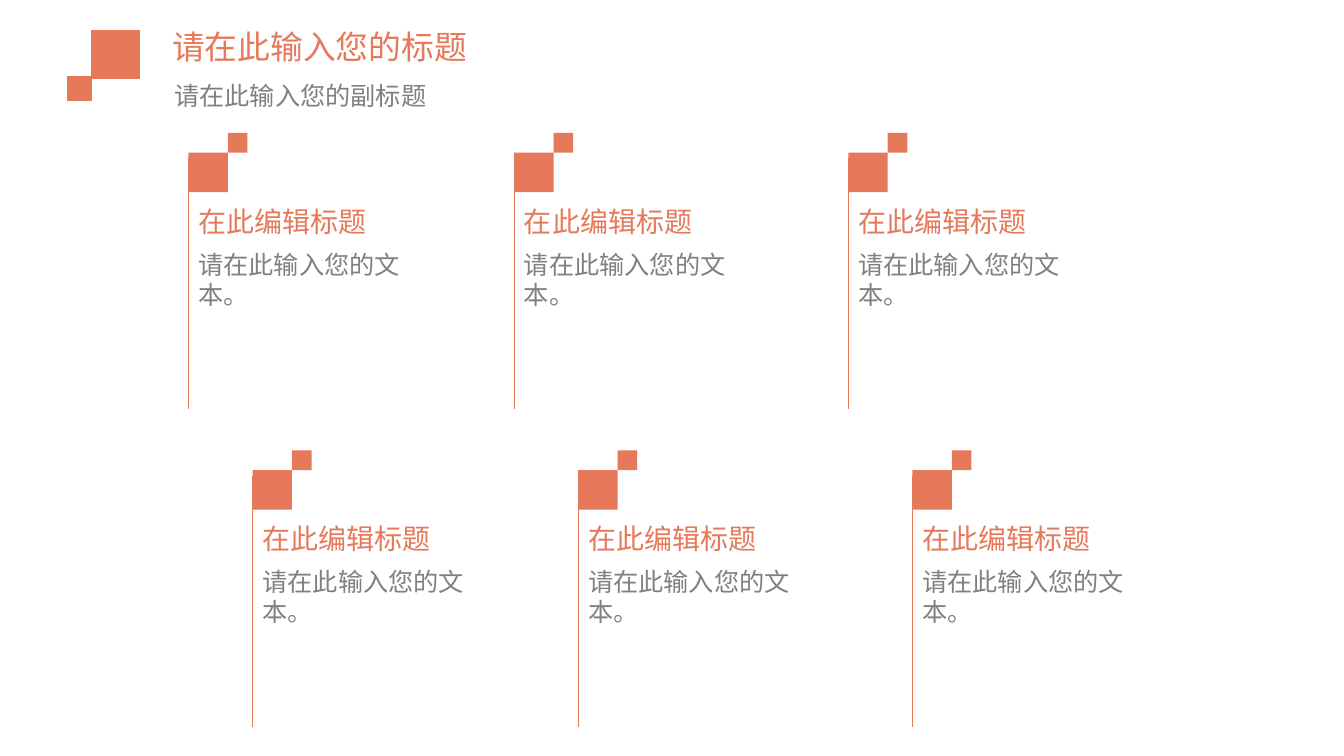
from dataclasses import dataclass
from itertools import product

from lxml import etree
from pptx import Presentation
from pptx.dml.color import RGBColor
from pptx.enum.shapes import MSO_CONNECTOR, MSO_SHAPE
from pptx.enum.text import MSO_ANCHOR
from pptx.oxml.ns import qn
from pptx.slide import Slide
from pptx.util import Pt

RECTANGLE = MSO_SHAPE.RECTANGLE
STRAIGHT = MSO_CONNECTOR.STRAIGHT
TOP = MSO_ANCHOR.TOP
MIDDLE = MSO_ANCHOR.MIDDLE

PAGE_WIDTH, PAGE_HEIGHT = 960, 540


@dataclass(frozen=True)
class Theme:
    accent: RGBColor = RGBColor(0xE6, 0x79, 0x5A)
    muted: RGBColor = RGBColor(0x80, 0x80, 0x80)
    font: str = "Arial"
    title_size: float = 23.4
    card_title_size: float = 20
    body_size: float = 18
    line_width: float = 0.75


@dataclass(frozen=True)
class Square:
    left: float
    top: float
    side: float


@dataclass(frozen=True)
class Card:
    left: float
    top: float
    title: str = "在此编辑标题"
    body: str = "请在此输入您的文本。"


THEME = Theme()

HEADER_SQUARES = (Square(65.5, 21.7, 34.2), Square(48.2, 54.7, 17.3))

# Two rows of three cards, the second row shifted to the right
COLUMN_LEFTS = (134.6, 367.2, 605.9)
ROWS = ((0, 95), (45.8, 321.8))  # shift, top
CARDS = [Card(left + shift, top)
         for (shift, top), left in product(ROWS, COLUMN_LEFTS)]

# Measures inside a card, from its top left corner
CARD_SQUARES = (Square(0, 14, 28.2), Square(28.2, 0, 14))
RULE_TOP, RULE_BOTTOM = 18, 197.3
TEXT_WIDTH = 174.2
TITLE_TOP, TITLE_HEIGHT = 46.8, 32.4
BODY_TOP, BODY_HEIGHT = 79.2, 142.6


def add_squares(page: Slide, squares: tuple[Square, ...], left: float = 0,
                top: float = 0, outlined: bool = False) -> None:
    group = page.shapes.add_group_shape()
    for square in squares:
        box = group.shapes.add_shape(
            RECTANGLE, Pt(left + square.left), Pt(top + square.top),
            Pt(square.side), Pt(square.side))
        box.shadow.inherit = False
        box.fill.solid()
        box.fill.fore_color.rgb = THEME.accent
        if outlined:
            box.line.color.rgb = THEME.accent
            box.line.width = Pt(THEME.line_width)
        else:
            box.line.fill.background()


def add_rule(page: Slide, left: float, top: float, bottom: float) -> None:
    rule = page.shapes.add_connector(
        STRAIGHT, Pt(left), Pt(top), Pt(left), Pt(bottom))
    rule.line.color.rgb = THEME.accent
    rule.line.width = Pt(THEME.line_width)
    etree.SubElement(rule._element.spPr, qn("a:effectLst"))


def add_text(page: Slide, text: str, *, left: float, top: float, width: float,
             height: float, size: float, color: RGBColor,
             anchor: MSO_ANCHOR = TOP, line_spacing: float = 1.0) -> None:
    box = page.shapes.add_textbox(Pt(left), Pt(top), Pt(width), Pt(height))
    frame = box.text_frame
    frame.word_wrap = True
    frame.vertical_anchor = anchor
    para = frame.paragraphs[0]
    para.line_spacing = line_spacing
    span = para.add_run()
    span.text = text
    span.font.name = THEME.font
    span.font.size = Pt(size)
    span.font.color.rgb = color


def add_header(page: Slide) -> None:
    add_squares(page, HEADER_SQUARES, outlined=True)
    add_text(page, "请在此输入您的标题", left=115.9, top=10.1, width=688.3,
             height=46.1, size=THEME.title_size, color=THEME.accent,
             anchor=MIDDLE)
    add_text(page, "请在此输入您的副标题", left=117.4, top=56.2, width=686.9,
             height=38.9, size=THEME.body_size, color=THEME.muted,
             line_spacing=0.9)


def add_card(page: Slide, card: Card) -> None:
    add_text(page, card.title, left=card.left, top=card.top + TITLE_TOP,
             width=TEXT_WIDTH, height=TITLE_HEIGHT,
             size=THEME.card_title_size, color=THEME.accent, anchor=MIDDLE)
    # The body stops at the foot of the page
    body_top = card.top + BODY_TOP
    add_text(page, card.body, left=card.left, top=body_top, width=TEXT_WIDTH,
             height=min(BODY_HEIGHT, PAGE_HEIGHT - body_top),
             size=THEME.body_size, color=THEME.muted)
    add_rule(page, card.left, card.top + RULE_TOP, card.top + RULE_BOTTOM)
    add_squares(page, CARD_SQUARES, card.left, card.top)


def main() -> None:
    deck = Presentation()
    deck.slide_width, deck.slide_height = Pt(PAGE_WIDTH), Pt(PAGE_HEIGHT)
    page = deck.slides.add_slide(deck.slide_layouts[6])
    add_header(page)
    for card in CARDS:
        add_card(page, card)
    deck.save("out.pptx")


if __name__ == "__main__":
    main()
